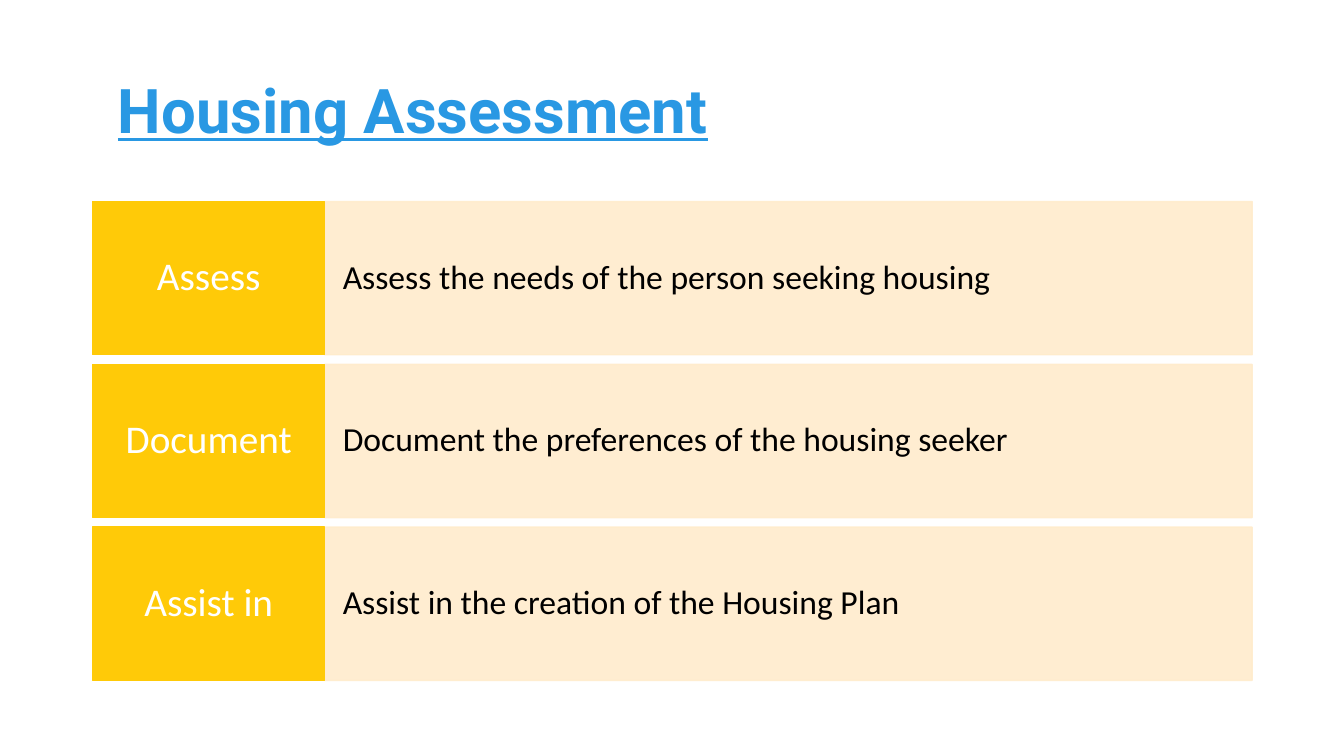
import pptx
import pptx.dml.color
import pptx.enum.shapes
import pptx.enum.text
import pptx.oxml.ns
import pptx.util
from lxml import etree
from pptx.util import Inches

ALIGN = pptx.enum.text.PP_ALIGN
MIDDLE = pptx.enum.text.MSO_ANCHOR.MIDDLE


def color(hex_string):
    return pptx.dml.color.RGBColor.from_string(hex_string)


class SlideBuilder:
    """Holds the style and the current slide."""

    BLUE, GOLD, CREAM = "2998E3", "FFCA08", "FFECCC"
    BLACK, WHITE = "000000", "FFFFFF"
    TITLE_FONT, BODY_FONT = "Roboto", "Calibri"

    def __init__(self, presentation):
        self.slide = presentation.slides.add_slide(presentation.slide_layouts[5])

    def set_text(self, shape, text, font_name, size, text_color, align, margins):
        frame = shape.text_frame
        frame.text = text
        frame.word_wrap = True
        frame.auto_size = pptx.enum.text.MSO_AUTO_SIZE.NONE
        frame.vertical_anchor = MIDDLE
        frame.margin_left, frame.margin_right = Inches(margins[0]), Inches(margins[1])
        frame.margin_top = frame.margin_bottom = Inches(margins[2])
        paragraph = frame.paragraphs[0]
        paragraph.alignment = align
        paragraph.line_spacing = 0.9
        font = paragraph.runs[0].font
        font.name = font_name
        font.size = pptx.util.Pt(size)
        font.color.rgb = color(text_color)
        return font

    def title(self, text, left, top, width, height):
        shape = self.slide.shapes.title
        shape.left, shape.top = Inches(left), Inches(top)
        shape.width, shape.height = Inches(width), Inches(height)
        font = self.set_text(shape, text, self.TITLE_FONT, 44, self.BLUE,
                             ALIGN.LEFT, (0.25, 0.1, 0.05))
        font.bold = font.underline = True

    def panel(self, left, top, width, height, fill, opacity=100):
        shape = self.slide.shapes.add_shape(
            pptx.enum.shapes.MSO_SHAPE.RECTANGLE,
            Inches(left), Inches(top), Inches(width), Inches(height))
        shape.shadow.inherit = False
        shape.fill.solid()
        shape.fill.fore_color.rgb = color(fill)
        shape.line.color.rgb = color(fill)
        shape.line.width = pptx.util.Pt(1)
        if opacity < 100:
            tag = pptx.oxml.ns.qn("a:srgbClr")
            for element in shape._element.spPr.iter(tag):
                alpha = etree.SubElement(element, pptx.oxml.ns.qn("a:alpha"))
                alpha.set("val", str(opacity * 1000))
        return shape

    def description(self, text, *box):
        shape = self.panel(*box, self.CREAM, opacity=90)
        self.set_text(shape, text, self.BODY_FONT, 24, self.BLACK,
                      ALIGN.LEFT, (0.18, 0.18, 0.39))

    def label(self, text, *box):
        shape = self.panel(*box, self.GOLD)
        self.set_text(shape, text, self.BODY_FONT, 28, self.WHITE,
                      ALIGN.CENTER, (0.12, 0.12, 0.15))


def main():
    presentation = pptx.Presentation()
    presentation.slide_width = Inches(13.33)
    presentation.slide_height = Inches(7.5)
    builder = SlideBuilder(presentation)

    # Title
    left, width = 0.92, 11.5
    builder.title("Housing Assessment", left, 0.4, width, 1.45)

    # Steps: gold label beside a pale description
    steps = [
        ("Assess", "Assess the needs of the person seeking housing"),
        ("Document", "Document the preferences of the housing seeker"),
        ("Assist in", "Assist in the creation of the Housing Plan"),
    ]
    first_top, last_top, height = 2, 5.23, 1.52
    label_width = width / 5
    pitch = (last_top - first_top) / (len(steps) - 1)
    for index, (label, description) in enumerate(steps):
        top = first_top + index * pitch
        builder.description(description, left + label_width, top,
                            width - label_width, height)
        builder.label(label, left, top, label_width, height)

    presentation.save("out.pptx")


if __name__ == "__main__":
    main()
